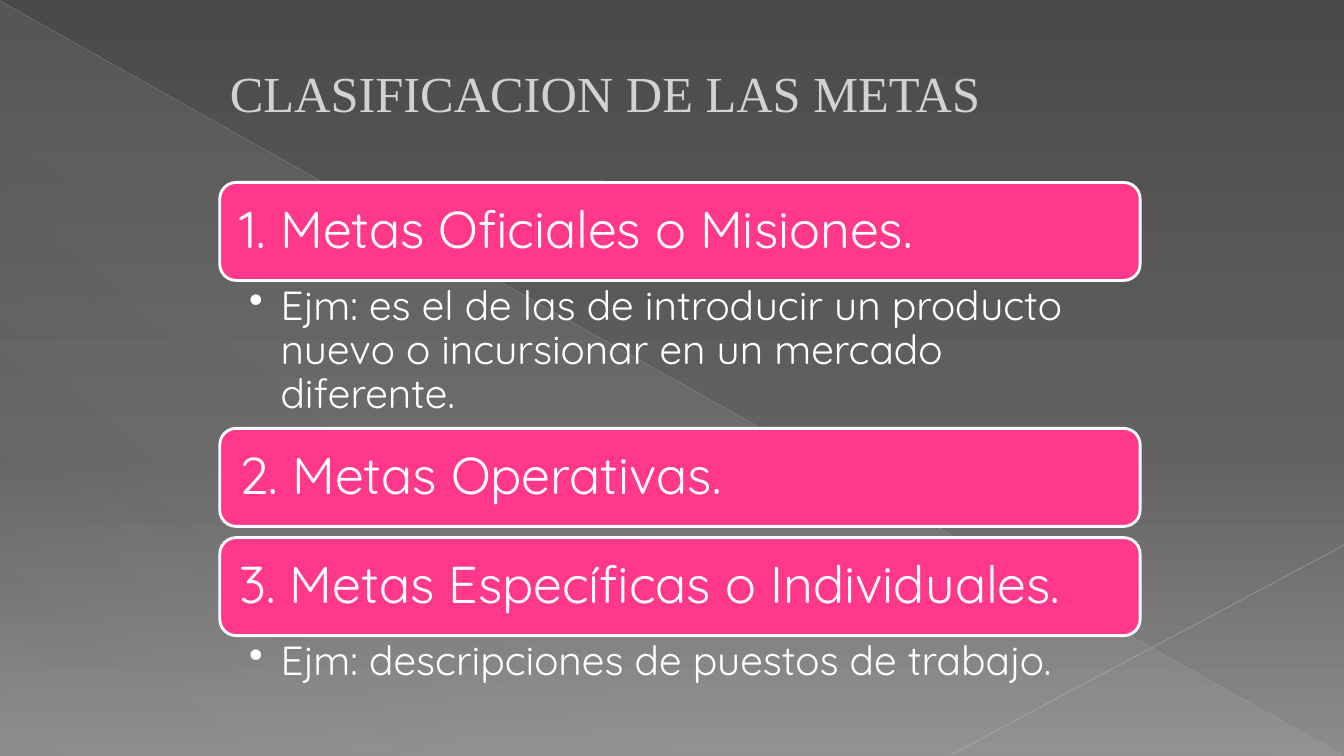
from lxml.etree import SubElement
from pptx import Presentation
from pptx.dml.color import RGBColor
from pptx.enum.shapes import MSO_CONNECTOR as Connector, MSO_SHAPE as Shape
from pptx.enum.text import MSO_ANCHOR as Anchor, PP_ALIGN as Align
from pptx.oxml.ns import qn
from pptx.util import Pt

COLORS = {
    "top": "4A4A4A", "middle": "626262", "bottom": "8C8C8C",
    "pale": "D2D2D2", "diagonal": "BFBFBF", "corner": "C6C6C6",
    "pink": "FF388C", "white": "FFFFFF",
}
LEFT, WIDTH = 157, 657.4
BAR_HEIGHT = 70
GOALS = [
    (130.3, "1. Metas Oficiales o Misiones.",
     "Ejm: es el de las de introducir un producto nuevo o incursionar en un mercado diferente.", 106),
    (306, "2. Metas Operativas.", None, 0),
    (384, "3. Metas Específicas o Individuales.",
     "Ejm: descripciones de puestos de trabajo.", 48),
]


class GoalSlide:
    body_font = "Quicksand"
    title_font = "Times New Roman"

    def __init__(self, presentation):
        self.slide = presentation.slides.add_slide(presentation.slide_layouts[5])
        self.shapes = self.slide.shapes

    def color(self, name):
        return RGBColor.from_string(COLORS[name])

    def set_alpha(self, element, percent):
        SubElement(element, qn("a:alpha"), val=str(percent * 1000))

    def fill_gradient(self, fill, element, stops, angle):
        """Fill with (position, color, opacity) stops; angle runs clockwise."""
        fill.gradient()
        fill.gradient_angle = 360 - angle
        stop_list = element.find(".//" + qn("a:gsLst"))
        for stop in list(stop_list):
            stop_list.remove(stop)
        for position, name, opacity in stops:
            stop = SubElement(stop_list, qn("a:gs"), pos=str(position * 1000))
            color = SubElement(stop, qn("a:srgbClr"), val=COLORS[name])
            if opacity < 100:
                self.set_alpha(color, opacity)

    def background(self, stops, angle):
        self.fill_gradient(self.slide.background.fill, self.slide.element, stops, angle)

    def triangle(self, left, top, width, height, stops, angle):
        shape = self.shapes.add_shape(
            Shape.RIGHT_TRIANGLE, Pt(left), Pt(top), Pt(width), Pt(height))
        shape.shadow.inherit = False
        shape.line.fill.background()
        self.fill_gradient(shape.fill, shape.element, stops, angle)

    def line(self, start, end, name, width, opacity):
        connector = self.shapes.add_connector(
            Connector.STRAIGHT, *(Pt(value) for value in (*start, *end)))
        connector.line.width = Pt(width)
        connector.line.color.rgb = self.color(name)
        self.set_alpha(connector.element.find(".//" + qn("a:srgbClr")), opacity)
        SubElement(connector.element.spPr, qn("a:effectLst"))

    def set_text(self, shape, text, size, font, name, margins, anchor):
        frame = shape.text_frame
        frame.text = text
        frame.word_wrap = True
        frame.vertical_anchor = anchor
        frame.margin_left = frame.margin_right = Pt(margins[0])
        frame.margin_top = frame.margin_bottom = Pt(margins[1])
        paragraph = frame.paragraphs[0]
        paragraph.alignment = Align.LEFT
        run_font = paragraph.runs[0].font
        run_font.size = Pt(size)
        run_font.name = font
        run_font.color.rgb = self.color(name)
        return paragraph

    def title(self, left, top, width, height, text):
        title = self.shapes.title
        title.left, title.top = Pt(left), Pt(top)
        title.width, title.height = Pt(width), Pt(height)
        self.set_text(title, text, 36, self.title_font, "pale", (7.2, 3.6), Anchor.MIDDLE)
        # Bring the title in front of the backdrop.
        title.element.getparent().append(title.element)

    def bar(self, top, text):
        bar = self.shapes.add_shape(
            Shape.ROUNDED_RECTANGLE, Pt(LEFT), Pt(top), Pt(WIDTH), Pt(BAR_HEIGHT))
        bar.shadow.inherit = False
        bar.fill.solid()
        bar.fill.fore_color.rgb = self.color("pink")
        bar.line.color.rgb = self.color("white")
        bar.line.width = Pt(2)
        paragraph = self.set_text(
            bar, text, 37, self.body_font, "white", (10.8, 10.8), Anchor.MIDDLE)
        paragraph.line_spacing = 0.9

    def example(self, top, height, text):
        box = self.shapes.add_textbox(Pt(LEFT), Pt(top), Pt(WIDTH), Pt(height))
        paragraph = self.set_text(
            box, text, 29, self.body_font, "white", (20.9, 3.6), Anchor.TOP)
        paragraph.level = 1
        paragraph.line_spacing = 0.9
        properties = paragraph._p.get_or_add_pPr()
        properties.set("marL", str(Pt(22.5)))
        properties.set("indent", str(Pt(-22.5)))
        SubElement(properties, qn("a:buChar"), char="•")


def main():
    presentation = Presentation()
    presentation.slide_width, presentation.slide_height = Pt(960), Pt(540)
    page = GoalSlide(presentation)
    page.background([(0, "top", 100), (60, "middle", 100), (100, "bottom", 100)], 90)
    page.triangle(0.7, 1.4, 958.6, 538.6,
                  [(0, "pale", 10), (70, "pale", 8), (100, "pale", 1)], 133)
    page.line((0, 0.7), (959, 539.3), "diagonal", 0.39, 35)
    page.line((960, 389.5), (679, 539.3), "corner", 0.47, 45)
    page.title(LEFT, 20.9, 635, 90, "CLASIFICACION DE LAS METAS")
    for top, goal, example, example_height in GOALS:
        page.bar(top, goal)
        if example:
            page.example(top + BAR_HEIGHT, example_height, example)
    presentation.save("out.pptx")


if __name__ == "__main__":
    main()
